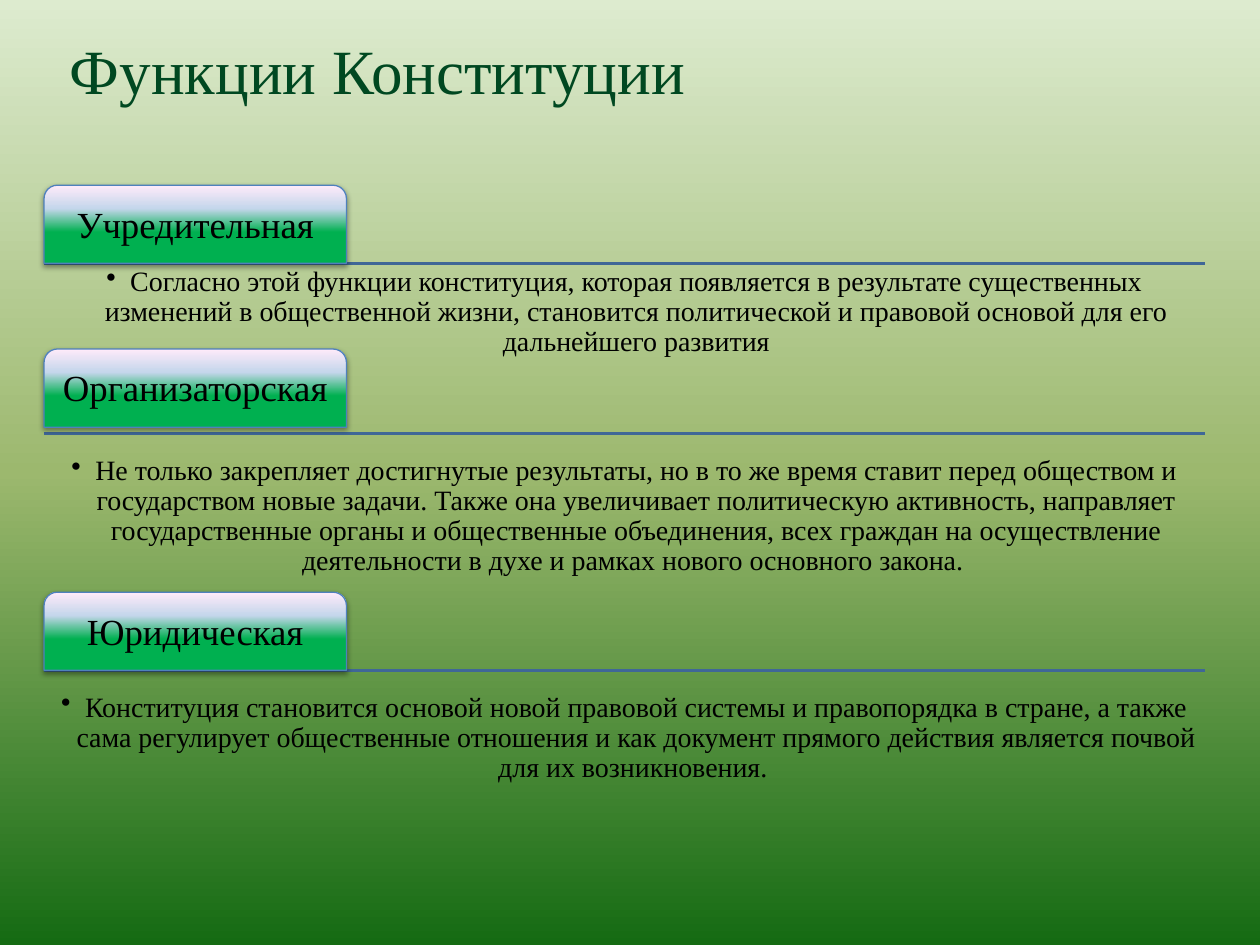
from lxml.etree import SubElement as Sub
from pptx import Presentation
from pptx.dml.color import RGBColor as Rgb
from pptx.enum.shapes import MSO_CONNECTOR as Conn, MSO_SHAPE as Form
from pptx.enum.text import MSO_ANCHOR as Anchor, PP_ALIGN as Align
from pptx.oxml.ns import qn
from pptx.util import Inches, Pt

COLS, ROWS = 100, 75
UNIT = Inches(10) // COLS
LEFT, WIDE = 3.5, 92.1
TAB_W, TAB_H, BODY_H = 24, 6.2, 12.5
HUES = {"title": "004821", "edge": "00B050", "text": "000000",
        "rule": "3F6797", "rim": "4F81BD", "shade": "000000"}
SKY = [(0, "DDEBCF"), (50, "9CB86E"), (100, "156B13")]
GLOSS = [(0, "00B050"), (40, "00B050"), (70, "C4D6EB"), (100, "FFEBFA")]
PARTS = [
    (14.7, 20.9, 20.9, "Учредительная",
     "Согласно этой функции конституция, которая появляется в результате "
     "существенных изменений в общественной жизни, становится политической "
     "и правовой основой для его дальнейшего развития"),
    (27.7, 34.4, 35.9, "Организаторская",
     "Не только закрепляет достигнутые результаты, но в то же время ставит "
     "перед обществом и государством новые задачи. Также она увеличивает "
     "политическую активность, направляет государственные органы и "
     "общественные объединения, всех граждан на осуществление деятельности "
     "в духе и рамках нового основного закона. "),
    (47, 53.2, 54.7, "Юридическая",
     "Конституция становится основой новой правовой системы и правопорядка "
     "в стране, а также сама регулирует общественные отношения и как "
     "документ прямого действия является почвой для их возникновения. "),
]


def span(*cells):
    """Turn grid cells into lengths."""
    return [int(cell * UNIT) for cell in cells]


def style(thing, form):
    """Set attributes from a dict of format values."""
    for name, value in form.items():
        setattr(thing, name, value)


def tint(node, hue):
    """Add a colour to an XML node and return it."""
    return Sub(node, qn("a:srgbClr"), val=HUES.get(hue, hue))


def grade(fill, root, stops, angle):
    """Fill with a linear gradient of any number of stops."""
    fill.gradient()
    fill.gradient_angle = angle
    group = root.xpath(".//a:gsLst")[0]
    for old in list(group):
        group.remove(old)
    for place, hue in stops:
        tint(Sub(group, qn("a:gs"), pos=str(place * 1000)), hue)


def write(shape, text, size, hue="text", pad=0.05, **form):
    """Write one centred paragraph in a shape and return it."""
    frame = shape.text_frame
    sides = ("left", "right", "top", "bottom")
    style(frame, {f"margin_{side}": Inches(pad) for side in sides})
    style(frame, {"word_wrap": True, **form})
    para = frame.paragraphs[0]
    para.alignment = Align.CENTER
    run = para.add_run()
    run.text = text
    style(run.font, {"name": "Times New Roman", "size": Pt(size)})
    run.font.color.rgb = Rgb.from_string(HUES[hue])
    return para


def title(slide, text):
    """Add the outlined heading."""
    box = slide.shapes.add_textbox(*span(4.3, 2, 51.3, 7.1))
    para = write(box, text, 36, "title", word_wrap=False)
    props = para.runs[0].font._element
    edge = Sub(props, qn("a:ln"), w=str(Pt(1.45)))
    tint(Sub(edge, qn("a:solidFill")), "edge")
    props.insert(0, edge)


def rule(slide, row):
    """Add a full-width line under a tab."""
    line = slide.shapes.add_connector(
        Conn.STRAIGHT, *span(LEFT, row, LEFT + WIDE, row))
    line.line.width = Pt(2)
    line.line.color.rgb = Rgb.from_string(HUES["rule"])
    Sub(line._element.spPr, qn("a:effectLst"))


def tab(slide, row, text):
    """Add a glossy tab with a soft shadow."""
    shape = slide.shapes.add_shape(
        Form.ROUND_2_SAME_RECTANGLE, *span(LEFT, row, TAB_W, TAB_H))
    shape.adjustments[0], shape.adjustments[1] = 0.17, 0
    grade(shape.fill, shape._element, GLOSS, 90)
    shape.line.width = Pt(0.75)
    shape.line.color.rgb = Rgb.from_string(HUES["rim"])
    shape.shadow.inherit = False
    glow = Sub(shape._element.xpath(".//a:effectLst")[0], qn("a:outerShdw"),
               blurRad=str(Pt(3.1)), dist=str(Pt(1.6)), dir="5400000",
               rotWithShape="0")
    Sub(tint(glow, "shade"), qn("a:alpha"), val="38000")
    para = write(shape, text, 21, vertical_anchor=Anchor.MIDDLE)
    para.line_spacing = 0.9


def body(slide, row, text):
    """Add a bulleted description."""
    box = slide.shapes.add_textbox(*span(LEFT, row, WIDE, BODY_H))
    para = write(box, text, 16, pad=0.03)
    style(para, {"level": 1, "line_spacing": 0.9})
    props = para._p.get_or_add_pPr()
    props.set("marL", str(Inches(0.19)))
    props.set("indent", str(-Inches(0.19)))
    Sub(props, qn("a:buChar"), char="•")


def main():
    """Build and save the slide."""
    deck = Presentation()
    style(deck, {"slide_width": COLS * UNIT, "slide_height": ROWS * UNIT})
    slide = deck.slides.add_slide(deck.slide_layouts[6])
    grade(slide.background.fill, slide._element, SKY, 270)
    title(slide, "Функции Конституции")
    for part in PARTS:
        rule(slide, part[1])
    for top, _, low, name, text in PARTS:
        tab(slide, top, name)
        body(slide, low, text)
    deck.save("out.pptx")


if __name__ == "__main__":
    main()
